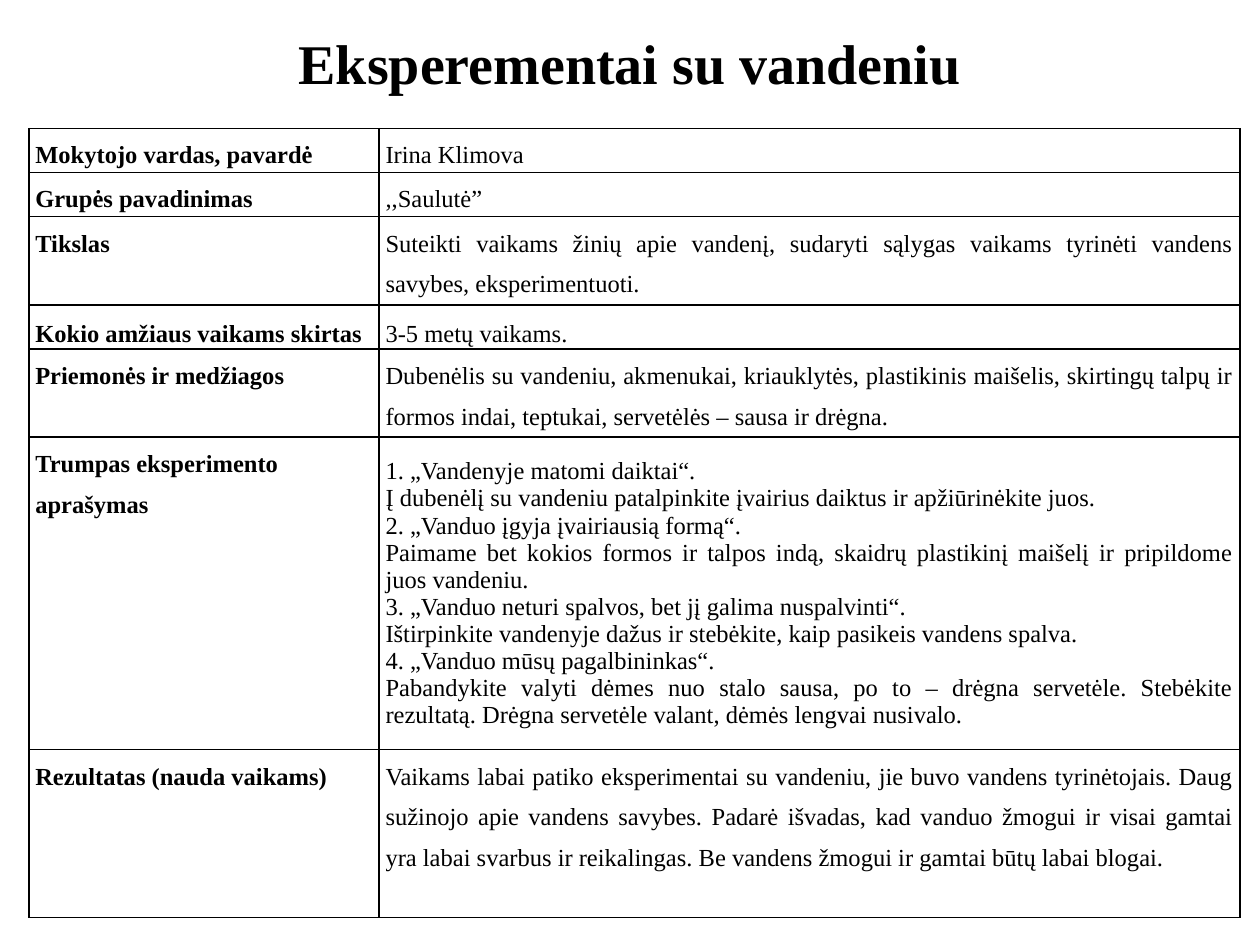
from dataclasses import dataclass

from lxml import etree
from pptx import Presentation
from pptx.dml.color import RGBColor
from pptx.enum.text import MSO_ANCHOR, PP_ALIGN
from pptx.oxml.ns import qn
from pptx.util import Inches, Pt

TOP, MIDDLE = MSO_ANCHOR.TOP, MSO_ANCHOR.MIDDLE
LEFT, CENTER, JUSTIFY = PP_ALIGN.LEFT, PP_ALIGN.CENTER, PP_ALIGN.JUSTIFY
TITLE_ONLY_LAYOUT = 5


@dataclass(frozen=True)
class Theme:
    font: str = "Times New Roman"
    ink: RGBColor = RGBColor(0, 0, 0)
    title_size: Pt = Pt(32)
    table_size: Pt = Pt(14)
    border_width: Pt = Pt(1)


@dataclass(frozen=True)
class Row:
    label: str
    content: tuple[str, ...]
    height: float
    label_align: PP_ALIGN = JUSTIFY
    label_anchor: MSO_ANCHOR = TOP
    content_anchor: MSO_ANCHOR = TOP
    content_spacing: float = 1.5


THEME = Theme()
TITLE = "Eksperementai su vandeniu"
COLUMN_WIDTHS = (2.78, 6.83)
ROWS = (
    Row("Mokytojo vardas, pavardė", ("Irina Klimova",), 0.35),
    Row("Grupės pavadinimas", (",,Saulutė”",), 0.35),
    Row("Tikslas", (
        "Suteikti vaikams žinių apie vandenį, sudaryti sąlygas vaikams tyrinėti "
        "vandens savybes, eksperimentuoti.",
    ), 0.7),
    Row("Kokio amžiaus vaikams skirtas", ("3-5 metų vaikams.",), 0.35,
        label_anchor=MIDDLE, content_anchor=MIDDLE),
    Row("Priemonės ir medžiagos", (
        "Dubenėlis su vandeniu, akmenukai, kriauklytės, plastikinis maišelis, "
        "skirtingų talpų ir formos indai, teptukai, servetėlės – sausa ir drėgna.",
    ), 0.7),
    Row("Trumpas eksperimento aprašymas", (
        "1. „Vandenyje matomi daiktai“.",
        "Į dubenėlį su vandeniu patalpinkite įvairius daiktus ir apžiūrinėkite juos.",
        "2. „Vanduo įgyja įvairiausią formą“.",
        "Paimame bet kokios formos ir talpos indą, skaidrų plastikinį maišelį ir "
        "pripildome juos vandeniu.",
        "3. „Vanduo neturi spalvos, bet jį galima nuspalvinti“.",
        "Ištirpinkite vandenyje dažus ir stebėkite, kaip pasikeis vandens spalva.",
        "4. „Vanduo mūsų pagalbininkas“.",
        "Pabandykite valyti dėmes nuo stalo sausa, po to – drėgna servetėle. "
        "Stebėkite rezultatą. Drėgna servetėle valant, dėmės lengvai nusivalo.",
    ), 2.48, label_align=LEFT, content_anchor=MIDDLE, content_spacing=1.0),
    Row("Rezultatas (nauda vaikams)", (
        "Vaikams labai patiko eksperimentai su vandeniu, jie buvo vandens "
        "tyrinėtojais. Daug sužinojo apie vandens savybes. Padarė išvadas, kad "
        "vanduo žmogui ir visai gamtai yra labai svarbus ir reikalingas. Be vandens "
        "žmogui ir gamtai būtų labai blogai.",
    ), 1.33),
)


def set_attributes(target, values: dict) -> None:
    for name, value in values.items():
        setattr(target, name, value)


def write_paragraphs(frame, lines: tuple[str, ...], size: Pt, bold: bool,
                     align: PP_ALIGN, spacing: float = 1.0) -> None:
    for index, line in enumerate(lines):
        paragraph = frame.add_paragraph() if index else frame.paragraphs[0]
        set_attributes(paragraph, {"alignment": align, "line_spacing": spacing})
        run = paragraph.add_run()
        run.text = line
        set_attributes(run.font, {"name": THEME.font, "size": size, "bold": bold})
        run.font.color.rgb = THEME.ink


def add_borders(cell) -> None:
    """Draw all four sides; they must come before the cell's fill."""
    properties = cell._tc.get_or_add_tcPr()
    for index, side in enumerate(("a:lnL", "a:lnR", "a:lnT", "a:lnB")):
        line = etree.Element(qn(side), w=str(THEME.border_width))
        fill = etree.SubElement(line, qn("a:solidFill"))
        etree.SubElement(fill, qn("a:srgbClr"), val=str(THEME.ink))
        properties.insert(index, line)


def fill_cell(cell, lines: tuple[str, ...], bold: bool, align: PP_ALIGN,
              anchor: MSO_ANCHOR, spacing: float) -> None:
    set_attributes(cell, {
        "margin_left": Inches(0.05), "margin_right": Inches(0.05),
        "margin_top": 0, "margin_bottom": 0, "vertical_anchor": anchor,
    })
    cell.fill.background()
    add_borders(cell)
    write_paragraphs(cell.text_frame, lines, THEME.table_size, bold, align, spacing)


def add_title(slide) -> None:
    title = slide.shapes.title
    set_attributes(title, {
        "left": 0, "top": Inches(0.16), "width": Inches(10), "height": Inches(0.94),
    })
    set_attributes(title.text_frame, {
        "vertical_anchor": TOP, "margin_top": Inches(0.07), "word_wrap": True,
    })
    write_paragraphs(title.text_frame, (TITLE,), THEME.title_size, True, CENTER)


def add_experiment_table(slide) -> None:
    table = slide.shapes.add_table(
        len(ROWS), len(COLUMN_WIDTHS), Inches(0.23), Inches(1.02),
        Inches(sum(COLUMN_WIDTHS)), Inches(sum(row.height for row in ROWS)),
    ).table
    set_attributes(table, {"first_row": False, "horz_banding": False})
    for column, width in zip(table.columns, COLUMN_WIDTHS):
        column.width = Inches(width)
    for index, row in enumerate(ROWS):
        table.rows[index].height = Inches(row.height)
        fill_cell(table.cell(index, 0), (row.label,), True,
                  row.label_align, row.label_anchor, 1.5)
        fill_cell(table.cell(index, 1), row.content, False,
                  JUSTIFY, row.content_anchor, row.content_spacing)


def main() -> None:
    presentation = Presentation()
    set_attributes(presentation, {
        "slide_width": Inches(10), "slide_height": Inches(7.5),
    })
    slide = presentation.slides.add_slide(
        presentation.slide_layouts[TITLE_ONLY_LAYOUT])
    add_title(slide)
    add_experiment_table(slide)
    presentation.save("out.pptx")


if __name__ == "__main__":
    main()
